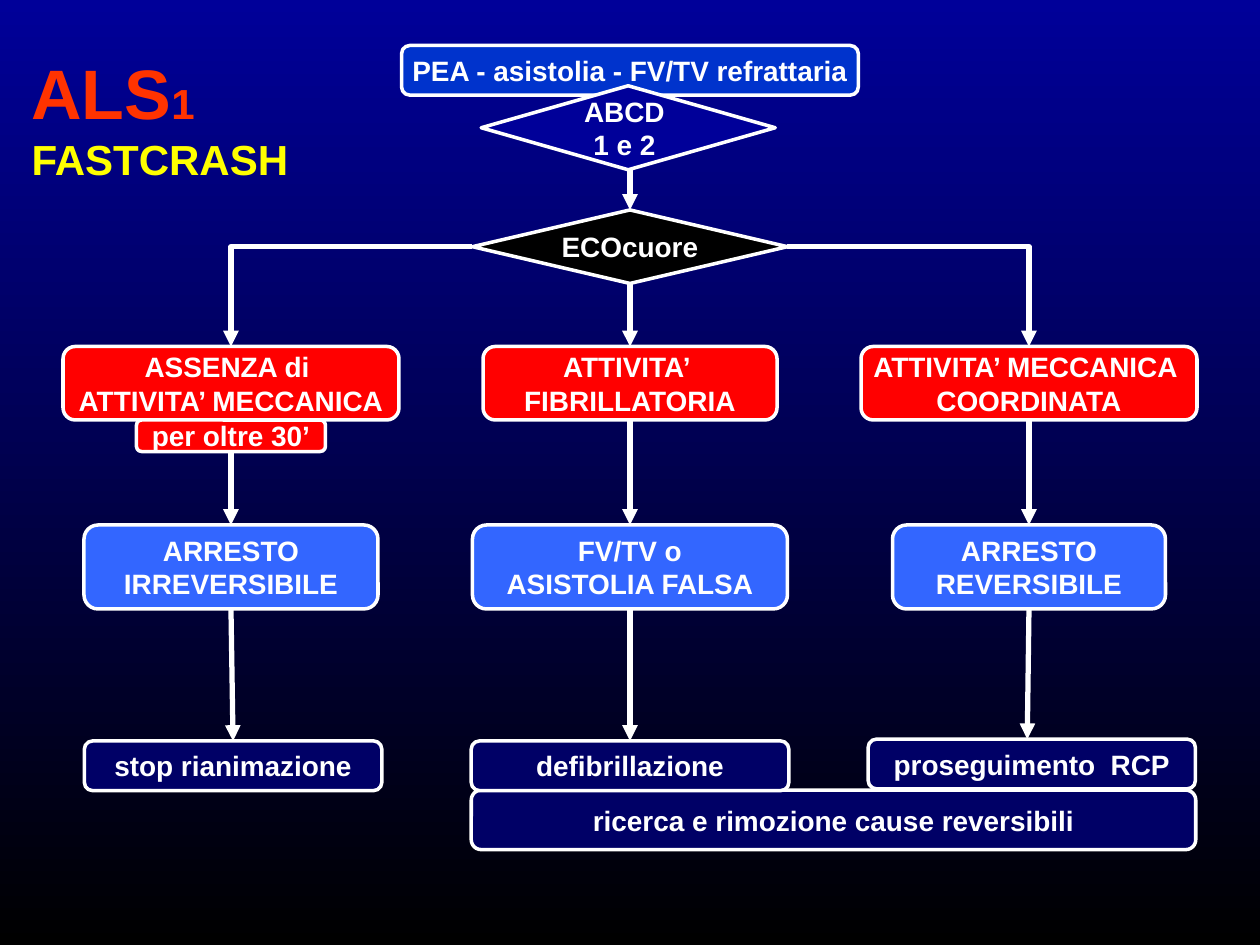
from dataclasses import dataclass
from typing import Optional

import pptx
import pptx.dml.color
import pptx.enum.shapes
import pptx.enum.text
import pptx.oxml
import pptx.oxml.ns
import pptx.util

Pt = pptx.util.Pt
RGBColor = pptx.dml.color.RGBColor
SHAPE = pptx.enum.shapes.MSO_SHAPE
CONNECTOR = pptx.enum.shapes.MSO_CONNECTOR
ALIGN = pptx.enum.text.PP_ALIGN
ANCHOR = pptx.enum.text.MSO_ANCHOR

WHITE = RGBColor(0xFF, 0xFF, 0xFF)
BLACK = RGBColor(0x00, 0x00, 0x00)
ORANGE = RGBColor(0xFF, 0x33, 0x00)
YELLOW = RGBColor(0xFF, 0xFF, 0x00)
RED = RGBColor(0xFF, 0x00, 0x00)
ROYAL = RGBColor(0x00, 0x33, 0xCC)
BLUE = RGBColor(0x33, 0x66, 0xFF)
DEEP = RGBColor(0x00, 0x00, 0x99)
NAVY = RGBColor(0x00, 0x00, 0x66)

LEFT, MID, RIGHT = 132, 360, 588
FINDING_Y, STATE_Y, ACTION_Y = 198, 300, 423.4
TOP, WEST, BOTTOM, EAST = range(4)
PROCESS = SHAPE.FLOWCHART_ALTERNATE_PROCESS
DECISION = SHAPE.FLOWCHART_DECISION
FRAME = {"margin_left": 0, "margin_right": 0, "margin_top": 0, "margin_bottom": 0}


@dataclass
class Box:
    name: str
    text: str
    center: float
    top: float
    width: float
    height: float
    fill: RGBColor
    kind: int = PROCESS
    wrap: bool = False


@dataclass
class Arrow:
    start: Optional[str]
    end: Optional[str]
    begin_site: int = BOTTOM
    points: tuple = (0, 0, 0, 0)


BOXES = [
    Box("eco", "ECOcuore", MID, 120, 180, 42, BLACK, DECISION),
    Box("absent", "ASSENZA di \nATTIVITA’ MECCANICA", LEFT, FINDING_Y, 192, 42, RED),
    Box("fibrillating", "ATTIVITA’ \nFIBRILLATORIA", MID, FINDING_Y, 168, 42, RED),
    Box("coordinated", "ATTIVITA’ MECCANICA \nCOORDINATA", RIGHT, FINDING_Y, 192, 42, RED),
    Box("duration", "per oltre 30’", LEFT, 240, 108, 18, RED, SHAPE.ROUNDED_RECTANGLE),
    Box("irreversible", "ARRESTO IRREVERSIBILE", LEFT, STATE_Y, 168, 48, BLUE, wrap=True),
    Box("false_asystole", "FV/TV o\nASISTOLIA FALSA", MID, STATE_Y, 180, 48, BLUE),
    Box("reversible", "ARRESTO REVERSIBILE", RIGHT, STATE_Y, 156, 48, BLUE, wrap=True),
    Box("rhythm", "PEA - asistolia - FV/TV refrattaria", MID, 26, 261, 28.4, ROYAL),
    Box("abcd", "ABCD \n1 e 2 ", 359, 49, 168, 48, DEEP, DECISION),
    Box("stop", "stop rianimazione", 133.2, ACTION_Y, 170, 28.4, NAVY),
    Box("causes", "ricerca e rimozione cause reversibili", 476.3, 451.5, 414, 34, NAVY),
    Box("continue", "proseguimento  RCP", 589.6, 422.4, 187, 28.4, NAVY),
    Box("defibrillate", "defibrillazione", MID, ACTION_Y, 181.5, 28.4, NAVY),
]
ARROWS = [
    Arrow(None, "eco", points=(MID, 97, MID, 120)),
    Arrow("eco", "absent", WEST),
    Arrow("eco", "fibrillating"),
    Arrow("eco", "coordinated", EAST),
    Arrow("duration", "irreversible"),
    Arrow("fibrillating", "false_asystole"),
    Arrow("coordinated", "reversible"),
    Arrow("irreversible", "stop"),
    Arrow("false_asystole", "defibrillate"),
    Arrow("reversible", None, points=(RIGHT, 348, 587, 422.4)),
]


def apply(target, values: dict) -> None:
    for name, value in values.items():
        setattr(target, name, value)


def add_run(p, text: str, size: float, color: RGBColor) -> None:
    r = p.add_run()
    r.text = text
    apply(r.font, {"name": "Arial", "size": Pt(size), "bold": True})
    r.font.color.rgb = color


def add_box(s, box: Box):
    sp = s.shapes.add_shape(box.kind, Pt(box.center - box.width / 2), Pt(box.top),
                            Pt(box.width), Pt(box.height))
    sp.shadow.inherit = False
    sp.fill.solid()
    sp.fill.fore_color.rgb = box.fill
    sp.line.color.rgb = WHITE
    sp.line.width = Pt(2)
    tf = sp.text_frame
    apply(tf, {**FRAME, "word_wrap": box.wrap, "vertical_anchor": ANCHOR.MIDDLE})
    for i, line in enumerate(box.text.split("\n")):
        p = tf.add_paragraph() if i else tf.paragraphs[0]
        p.alignment = ALIGN.CENTER
        add_run(p, line, 16, WHITE)
    return sp


def add_arrow(s, arrow: Arrow, boxes: dict) -> None:
    bent = arrow.begin_site != BOTTOM
    kind = CONNECTOR.ELBOW if bent else CONNECTOR.STRAIGHT
    cx = s.shapes.add_connector(kind, *map(Pt, arrow.points))
    if arrow.start:
        cx.begin_connect(boxes[arrow.start], arrow.begin_site)
    if arrow.end:
        cx.end_connect(boxes[arrow.end], TOP)
    cx.line.color.rgb = WHITE
    cx.line.width = Pt(3)
    qn = pptx.oxml.ns.qn
    sp_pr = cx._element.spPr
    if bent:
        sp_pr.find(qn("a:prstGeom")).set("prst", "bentConnector2")
    tail = pptx.oxml.parse_xml(f'<a:tailEnd {pptx.oxml.ns.nsdecls("a")} type="triangle"/>')
    sp_pr.find(qn("a:ln")).append(tail)
    sp_pr.append(pptx.oxml.parse_xml(f'<a:effectLst {pptx.oxml.ns.nsdecls("a")}/>'))


def add_title(s) -> None:
    sp = s.shapes.title
    apply(sp, {"left": Pt(18), "top": Pt(28), "width": Pt(186), "height": Pt(77)})
    tf = sp.text_frame
    apply(tf, {**FRAME, "word_wrap": True, "vertical_anchor": ANCHOR.TOP,
               "auto_size": pptx.enum.text.MSO_AUTO_SIZE.NONE})
    p = tf.paragraphs[0]
    p.alignment = ALIGN.LEFT
    for text, size, color in [("ALS", 40, ORANGE), ("1 ", 24, ORANGE), ("FASTCRASH", 24, YELLOW)]:
        add_run(p, text, size, color)


def set_background(s) -> None:
    fill = s.background.fill
    fill.gradient()
    fill.gradient_angle = 270
    for stop, position, color in zip(fill.gradient_stops, (0, 1), (DEEP, BLACK)):
        stop.position = position
        stop.color.rgb = color


def main() -> None:
    prs = pptx.Presentation()
    apply(prs, {"slide_width": Pt(720), "slide_height": Pt(540)})
    s = prs.slides.add_slide(prs.slide_layouts[5])
    set_background(s)
    add_title(s)
    boxes = {box.name: add_box(s, box) for box in BOXES}
    for arrow in ARROWS:
        add_arrow(s, arrow, boxes)
    prs.save("out.pptx")


if __name__ == "__main__":
    main()
